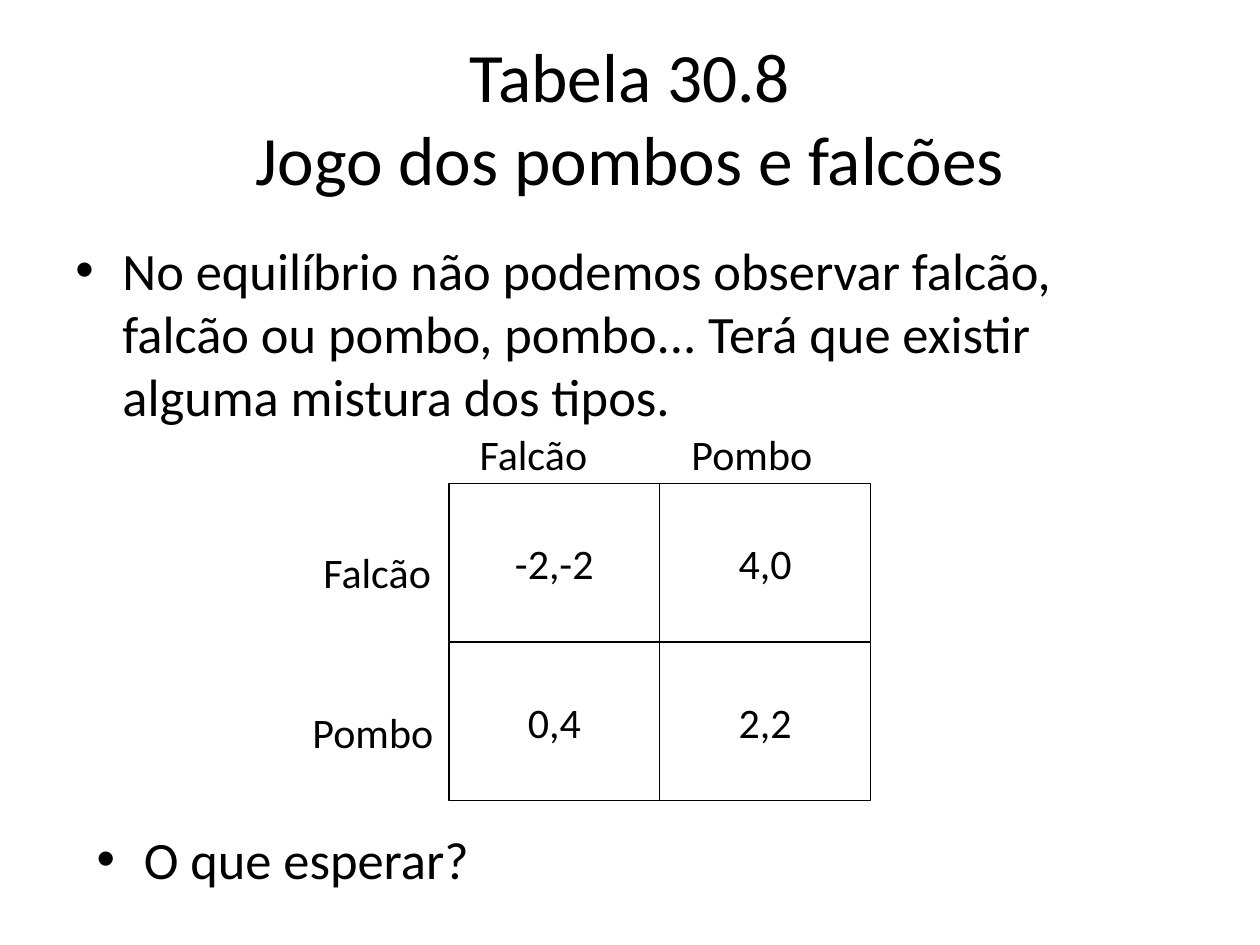
"""Build the slide with the payoff table of the hawk and dove game."""
from itertools import product
from lxml.etree import SubElement
from pptx import Presentation
from pptx.dml.color import RGBColor
from pptx.enum.shapes import MSO_SHAPE
from pptx.enum.text import MSO_ANCHOR, PP_ALIGN
from pptx.oxml.ns import qn
from pptx.util import Cm, Pt

TITLE = "Tabela 30.8\vJogo dos pombos e falcões"
POINTS = [
    ("No equilíbrio não podemos observar falcão, falcão ou pombo, pombo... "
     "Terá que existir alguma mistura dos tipos.", (1.27, 4.67, 22.86, 4.06)),
    ("O que esperar?", (1.7, 16.54, 22.86, 2)),
]
HEADS = [("Falcão", 9.42), ("Pombo", 13.69)]
SIDES = [("Falcão", 6.27), ("Pombo", 6.05)]
PAYS = [["-2,-2", "4,0"], ["0,4", "2,2"]]

THEME = {
    "font": "Calibri",
    "ink": RGBColor(0, 0, 0),
    "title": Pt(39.6),
    "body": Pt(30),
    "label": Pt(24),
    "line": Pt(0.75),
}
LEFT, TOP = 9.05, 9.75
WIDE, HIGH = 4.25, 3.18
STEP = 3.21


def style(shape, text, size, align=PP_ALIGN.LEFT, anchor=MSO_ANCHOR.TOP, wrap=True):
    """Write text in a shape and format it."""
    frame = shape.text_frame
    frame.text = text
    frame.word_wrap = wrap
    frame.vertical_anchor = anchor
    para = frame.paragraphs[0]
    para.alignment = align
    for run in para.runs:
        run.font.name = THEME["font"]
        run.font.size = THEME[size]
        run.font.color.rgb = THEME["ink"]
    return para


def box(slide, area):
    """Add a text box at an area given in centimetres."""
    return slide.shapes.add_textbox(*map(Cm, area))


def bullet(para):
    """Give a paragraph a hanging round bullet."""
    props = para._p.get_or_add_pPr()
    props.set("marL", str(Cm(0.95)))
    props.set("indent", str(-Cm(0.95)))
    SubElement(props, qn("a:buFont")).set("typeface", "Arial")
    SubElement(props, qn("a:buChar")).set("char", "•")


def cell(slide, row, col):
    """Draw one payoff cell."""
    area = (LEFT + col * WIDE, TOP + row * STEP, WIDE, HIGH)
    rect = slide.shapes.add_shape(MSO_SHAPE.RECTANGLE, *map(Cm, area))
    rect.shadow.inherit = False
    rect.fill.background()
    rect.line.color.rgb = THEME["ink"]
    rect.line.width = THEME["line"]
    style(rect, PAYS[row][col], "label", PP_ALIGN.CENTER, MSO_ANCHOR.MIDDLE, False)


def main():
    """Build and save the slide."""
    deck = Presentation()
    deck.slide_width, deck.slide_height = Cm(25.4), Cm(19.05)
    slide = deck.slides.add_slide(deck.slide_layouts[6])
    head = box(slide, (1.27, 0.76, 22.86, 3.18))
    style(head, TITLE, "title", PP_ALIGN.CENTER, MSO_ANCHOR.MIDDLE)
    for text, area in POINTS:
        bullet(style(box(slide, area), text, "body"))
    for text, left in HEADS:
        style(box(slide, (left, 8.51, 3.3, 1.27)), text, "label")
    for row, (text, left) in enumerate(SIDES):
        top = TOP + 1.15 + row * STEP
        style(box(slide, (left, top, 3.15, 1.27)), text, "label")
    for row, col in product(range(2), repeat=2):
        cell(slide, row, col)
    deck.save("out.pptx")


if __name__ == "__main__":
    main()
